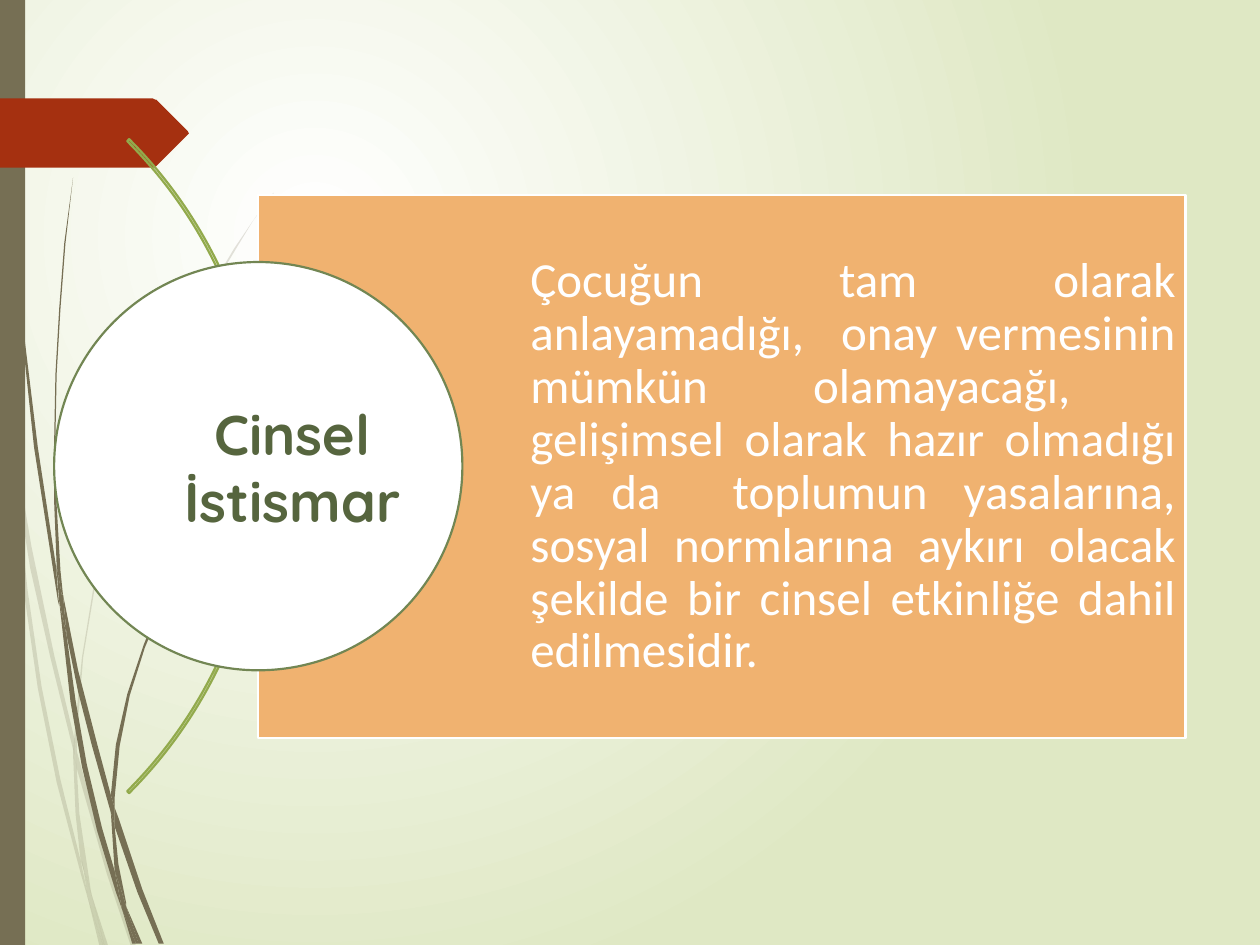
from lxml import etree
from pptx import Presentation
from pptx import util as u
from pptx.dml.color import RGBColor
from pptx.enum import shapes, text
from pptx.oxml.ns import qn

PX = 9144  # 100 px to the inch
WIDTH, HEIGHT = 1000, 750
COLORS = {
    "white": "FFFFFF",
    "meadow": "DFE8C4",
    "stem": "766F54",
    "tab": "A53010",
    "arc": "92AA4C",
    "panel": "F0B270",
    "ring": "728653",
    "heading": "56653E",
}

# Outlines of the grass blades, as x, y pairs in px.
FAINT_BLADES = [
    [(8, 350), (6, 322), (0, 282), (0, 299), (7, 344)],
    [(40, 522), (59, 599), (59, 586), (43, 520), (25, 434), (10, 345), (12, 376), (24, 451)],
    [(64, 607), (61, 596), (61, 610), (85, 694), (104, 751), (108, 751), (88, 692)],
    [(83, 751), (86, 751), (73, 711)],
    [(64, 683), (48, 619), (33, 545), (22, 469), (12, 376), (8, 350), (19, 470),
     (30, 546), (45, 621), (64, 693), (70, 714), (69, 707)],
    [(58, 599), (60, 646), (64, 683), (67, 692), (73, 711), (72, 706), (63, 646),
     (61, 610), (61, 608)],
    [(61, 584), (66, 522), (76, 462), (92, 405), (111, 349), (134, 295), (159, 245),
     (187, 198), (201, 175), (217, 154), (217, 153), (201, 175), (186, 197), (158, 244),
     (133, 294), (110, 348), (91, 404), (75, 461), (65, 522), (59, 584), (59, 586), (61, 596)],
    [(70, 714), (79, 751), (82, 751)],
    [(61, 608), (61, 610), (61, 596), (59, 586), (58, 599)],
    [(67, 692), (65, 683), (69, 707), (70, 714), (82, 751), (83, 751), (73, 711)],
]
DARK_BLADES = [
    [(5, 110), (14, 233), (27, 355), (46, 477), (47, 481), (45, 457), (45, 453), (30, 355),
     (15, 232), (6, 109), (4, 48), (3, 0), (2, 0), (3, 48)],
    [(73, 592), (88, 645), (88, 633), (88, 631), (77, 590), (62, 532), (50, 472), (53, 505),
     (62, 549)],
    [(94, 649), (91, 641), (91, 656), (109, 708), (126, 749), (130, 749), (113, 706)],
    [(91, 691), (81, 657), (69, 607), (60, 556), (53, 505), (47, 477), (56, 557), (65, 608),
     (77, 659), (92, 708), (97, 722), (96, 717)],
    [(50, 472), (48, 453), (45, 401), (44, 349), (45, 297), (48, 245), (52, 193), (58, 141),
     (51, 193), (47, 245), (44, 297), (43, 349), (43, 399), (45, 449), (49, 472)],
    [(110, 749), (113, 749), (100, 719)],
    [(47, 477), (53, 505), (50, 472), (49, 472), (45, 449), (45, 453)],
    [(91, 633), (95, 592), (103, 552), (115, 514), (131, 476), (149, 440), (169, 406),
     (191, 374), (203, 359), (216, 344), (215, 344), (203, 358), (191, 373), (168, 405),
     (147, 439), (129, 474), (114, 512), (101, 551), (92, 591), (88, 631), (91, 641)],
    [(97, 722), (105, 749), (108, 749)],
    [(88, 645), (91, 691), (96, 706), (100, 719), (100, 716), (94, 686), (91, 656), (90, 651)],
    [(88, 645), (90, 651), (91, 656), (91, 641), (88, 631), (88, 633)],
    [(96, 706), (91, 691), (96, 717), (97, 722), (108, 749), (110, 749), (100, 719)],
]
RED_TAB = [(149, 29), (124, 54), (123, 55), (121, 55), (0, 55), (0, 0), (121, 0), (123, 1),
           (124, 1), (149, 26), (150, 28)]

DEFINITION = (
    "Çocuğun tam olarak anlayamadığı,  onay vermesinin mümkün olamayacağı,  "
    "gelişimsel olarak hazır olmadığı ya da  toplumun yasalarına, sosyal normlarına "
    "aykırı olacak şekilde bir cinsel etkinliğe dahil edilmesidir."
)


def rgb(name):
    return RGBColor.from_string(COLORS[name])


def emu(box):
    return [length * PX for length in box]


def paint(shape, fill=None, line=None, opacity=None):
    """Set fill and outline; opacity is a percentage of the fill."""
    shape.shadow.inherit = False
    if fill:
        shape.fill.solid()
        shape.fill.fore_color.rgb = rgb(fill)
    else:
        shape.fill.background()
    if line:
        shape.line.color.rgb = rgb(line)
        shape.line.width = u.Pt(1.25)
    else:
        shape.line.fill.background()
    if opacity:
        color = shape._element.spPr.find(qn("a:solidFill"))[0]
        etree.SubElement(color, qn("a:alpha")).set("val", str(opacity * 1000))


def add_preset(slide, kind, box, fill=None, line=None):
    preset = slide.shapes.add_shape(kind, *emu(box))
    paint(preset, fill, line)
    return preset


def add_outline(slide, origin, points, fill, opacity=None):
    left, top = origin
    start, *rest = [(left + x, top + y) for x, y in points]
    builder = slide.shapes.build_freeform(*start, scale=PX)
    builder.add_line_segments(rest, close=True)
    paint(builder.convert_to_shape(), fill, opacity=opacity)


def add_copy(slide, box, words, font, size, color, align, bold=False):
    """Add a wrapped one-paragraph text box and return its frame."""
    frame = slide.shapes.add_textbox(*emu(box)).text_frame
    frame.word_wrap = True
    paragraph = frame.paragraphs[0]
    paragraph.text = words
    paragraph.alignment = align
    paragraph.font.name = font
    paragraph.font.size = u.Pt(size)
    paragraph.font.bold = bold
    paragraph.font.color.rgb = rgb(color)
    return frame


def fill_background(slide):
    """Spread a round glow from the upper left."""
    fill = slide.background.fill
    fill.gradient()
    for stop, name, position in zip(fill.gradient_stops, ("white", "meadow"), (0, 1)):
        stop.color.rgb = rgb(name)
        stop.position = position
    gradient = next(slide._element.iter(qn("a:gradFill")))
    gradient.remove(gradient.find(qn("a:lin")))
    glow = etree.SubElement(gradient, qn("a:path"), path="circle")
    etree.SubElement(glow, qn("a:fillToRect"), l="50000", t="50000", r="100000", b="100000")


def draw_side_decoration(slide, box):
    left, top, _, height = box
    for blades, opacity in ((FAINT_BLADES, 20), (DARK_BLADES, None)):
        for blade in blades:
            add_outline(slide, (left, top), blade, "stem", opacity)
    add_preset(slide, shapes.MSO_SHAPE.RECTANGLE, (left, top, 20, height), "stem")
    add_outline(slide, (left, top + 78), RED_TAB, "tab")


def draw_definition(slide, box):
    """Place the arc, the panel with its definition, and the circle on the panel's edge."""
    left, top, _, height = box
    arc_size, circle_size = 734, 324
    middle = top + height // 2

    arc = add_preset(slide, shapes.MSO_SHAPE.BLOCK_ARC,
                     (left - 729, middle - arc_size // 2, arc_size, arc_size), line="arc")
    for index, value in enumerate((189, 27, 0.003)):
        arc.adjustments[index] = value

    add_preset(slide, shapes.MSO_SHAPE.RECTANGLE, box, "panel", "white")
    definition = add_copy(slide, box, DEFINITION, "Calibri", 28, "white",
                          text.PP_ALIGN.JUSTIFY)
    definition.vertical_anchor = text.MSO_ANCHOR.MIDDLE
    definition.margin_left = 216 * PX
    definition.margin_right = definition.margin_top = definition.margin_bottom = 8 * PX
    definition.paragraphs[0].line_spacing = 0.9

    add_preset(slide, shapes.MSO_SHAPE.OVAL,
               (left - circle_size // 2, middle - circle_size // 2, circle_size, circle_size),
               "white", "ring")
    heading = add_copy(slide, (left - 107, top + 157, 268, 118), "Cinsel İstismar",
                       "Quicksand", 32, "heading", text.PP_ALIGN.CENTER, bold=True)
    heading.auto_size = text.MSO_AUTO_SIZE.SHAPE_TO_FIT_TEXT


def main():
    deck = Presentation()
    deck.slide_width, deck.slide_height = emu((WIDTH, HEIGHT))
    slide = deck.slides.add_slide(deck.slide_layouts[6])
    fill_background(slide)
    draw_side_decoration(slide, (0, 0, 217, HEIGHT))
    draw_definition(slide, (205, 155, 736, 431))
    deck.save("out.pptx")


if __name__ == "__main__":
    main()
